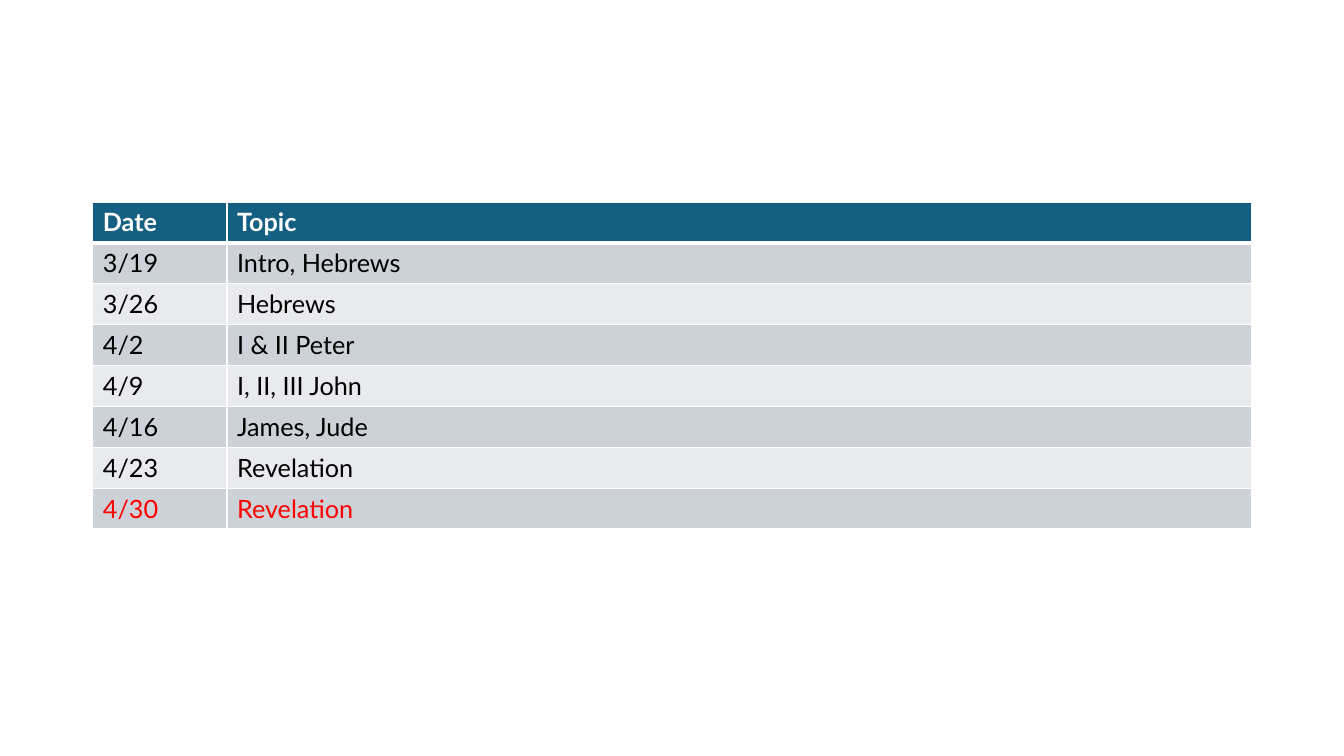
from dataclasses import dataclass

from lxml import etree
from pptx import Presentation
from pptx.dml.color import RGBColor
from pptx.oxml.ns import qn
from pptx.util import Cm, Pt


@dataclass(frozen=True)
class Theme:
    font: str = "Lato"
    size: int = 18
    head: str = "156082"
    bands: tuple = ("CCD2D8", "E8EAED")
    white: str = "FFFFFF"
    ink: str = "000000"
    alert: str = "FF0000"
    thin: int = 1
    thick: int = 3


THEME = Theme()
ROWS = [
    ("Date", "Topic"),
    ("3/19", "Intro, Hebrews"),
    ("3/26", "Hebrews"),
    ("4/2", "I & II Peter"),
    ("4/9", "I, II, III John"),
    ("4/16", "James, Jude"),
    ("4/23", "Revelation"),
    ("4/30", "Revelation"),
]
WIDTHS = (Cm(3.38), Cm(25.83))
HEIGHT = Cm(1.03)


def write(cell, text, color=THEME.ink, bold=False):
    run = cell.text_frame.paragraphs[0].add_run()
    run.text = text
    run.font.name = THEME.font
    run.font.size = Pt(THEME.size)
    run.font.bold = bold
    run.font.color.rgb = RGBColor.from_string(color)


def edge(cell, top, bottom):
    """Draw white borders; they must come before the fill in the cell's XML."""
    props = cell._tc.get_or_add_tcPr()
    sides = {"lnL": THEME.thin, "lnR": THEME.thin, "lnT": top, "lnB": bottom}
    for spot, (side, width) in enumerate(sides.items()):
        line = etree.Element(qn(f"a:{side}"), w=str(Pt(width)))
        fill = etree.SubElement(line, qn("a:solidFill"))
        etree.SubElement(fill, qn("a:srgbClr"), val=THEME.white)
        props.insert(spot, line)


deck = Presentation()
deck.slide_width, deck.slide_height = Cm(33.87), Cm(19.05)
slide = deck.slides.add_slide(deck.slide_layouts[6])

frame = slide.shapes.add_table(
    len(ROWS), len(WIDTHS), Cm(2.34), Cm(5.09), sum(WIDTHS), HEIGHT * len(ROWS)
)
table = frame.table
for col, width in zip(table.columns, WIDTHS):
    col.width = width

last = len(ROWS) - 1
for r, row in enumerate(ROWS):
    table.rows[r].height = HEIGHT
    first = r == 0
    back = THEME.head if first else THEME.bands[(r - 1) % 2]
    color = THEME.white if first else THEME.alert if r == last else THEME.ink
    for c, text in enumerate(row):
        cell = table.cell(r, c)
        cell.fill.solid()
        cell.fill.fore_color.rgb = RGBColor.from_string(back)
        write(cell, text, color=color, bold=first)
        edge(
            cell,
            top=THEME.thick if r == 1 else THEME.thin,
            bottom=THEME.thick if first else THEME.thin,
        )

deck.save("out.pptx")
